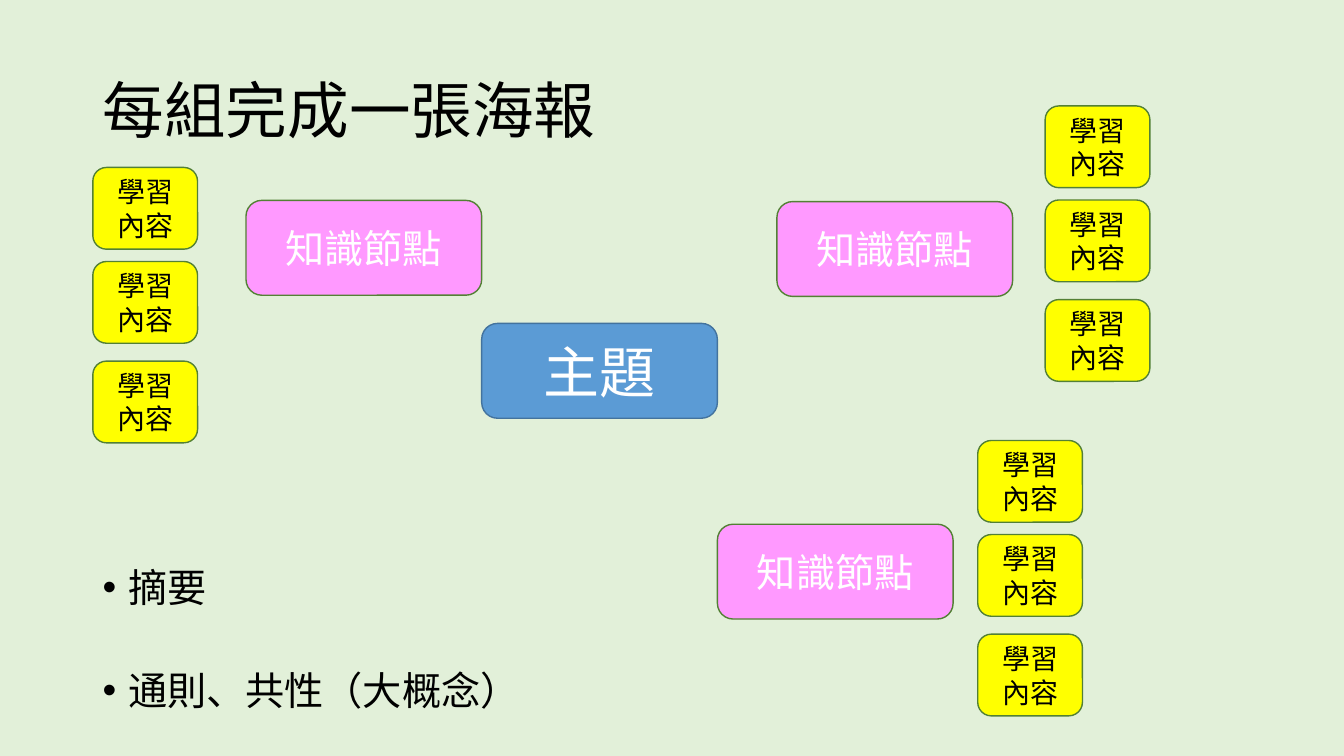
from dataclasses import dataclass

from lxml.etree import SubElement
from pptx import Presentation
from pptx.dml.color import RGBColor
from pptx.enum.shapes import MSO_SHAPE as Preset
from pptx.enum.text import MSO_ANCHOR as Anchor, PP_ALIGN as Align
from pptx.oxml.ns import qn
from pptx.util import Cm, Pt


@dataclass(frozen=True)
class Theme:
    font: str = "Calibri"
    background: str = "E2F0D9"
    ink: str = "000000"
    light_ink: str = "FFFFFF"
    topic_fill: str = "5B9BD5"
    topic_line: str = "43739E"
    node_fill: str = "FF99FF"
    content_fill: str = "FFFF00"
    branch_line: str = "538035"
    title_size: int = 44
    topic_size: int = 40
    body_size: int = 28
    content_size: int = 20


THEME = Theme()
NODE_SIZE = (5.94, 2.39)
CONTENT_SIZE = (2.64, 2.06)
CONTENT_OFFSETS = (0, 2.37, 4.88)

# Top left corners in cm: knowledge node, then its column of contents
BRANCHES = [
    ((6.2, 5.05), (2.34, 4.22)),
    ((19.58, 5.08), (26.34, 2.67)),
    ((18.08, 13.21), (24.64, 11.1)),
]


def set_font(para, size, color):
    para.font.name = THEME.font
    para.font.size = Pt(size)
    para.font.color.rgb = RGBColor.from_string(color)


def add_text_frame(page, box):
    frame = page.shapes.add_textbox(*map(Cm, box)).text_frame
    frame.word_wrap = True
    return frame


def add_title(page, box, text):
    frame = add_text_frame(page, box)
    frame.vertical_anchor = Anchor.MIDDLE
    para = frame.paragraphs[0]
    para.text = text
    para.line_spacing = 0.9
    set_font(para, THEME.title_size, THEME.ink)


def add_bullets(page, box, items):
    frame = add_text_frame(page, box)
    for index, item in enumerate(items):
        para = frame.paragraphs[0] if index == 0 else frame.add_paragraph()
        para.text = item
        para.line_spacing = 0.8
        if index:
            para.space_before = Pt(47)
        properties = para._p.get_or_add_pPr()
        properties.set("marL", str(Cm(0.64)))
        properties.set("indent", str(-Cm(0.64)))
        SubElement(properties, qn("a:buFont")).set("typeface", "Arial")
        SubElement(properties, qn("a:buChar")).set("char", "•")
        set_font(para, THEME.body_size, THEME.ink)


def add_card(page, box, text, fill, line, size, color):
    card = page.shapes.add_shape(Preset.ROUNDED_RECTANGLE, *map(Cm, box))
    card.shadow.inherit = False
    card.fill.solid()
    card.fill.fore_color.rgb = RGBColor.from_string(fill)
    card.line.color.rgb = RGBColor.from_string(line)
    card.line.width = Pt(1)
    frame = card.text_frame
    frame.word_wrap = True
    frame.vertical_anchor = Anchor.MIDDLE
    para = frame.paragraphs[0]
    para.text = text
    para.alignment = Align.CENTER
    set_font(para, size, color)


def add_branch(page, node_corner, column_corner):
    """Place a knowledge node and its column of learning contents."""
    add_card(page, (*node_corner, *NODE_SIZE), "知識節點", THEME.node_fill,
             THEME.branch_line, THEME.body_size, THEME.light_ink)
    left, top = column_corner
    for offset in CONTENT_OFFSETS:
        add_card(page, (left, top + offset, *CONTENT_SIZE), "學習內容",
                 THEME.content_fill, THEME.branch_line,
                 THEME.content_size, THEME.ink)


def main():
    deck = Presentation()
    deck.slide_width, deck.slide_height = Cm(33.87), Cm(19.05)
    page = deck.slides.add_slide(deck.slide_layouts[6])
    page.background.fill.solid()
    page.background.fill.fore_color.rgb = RGBColor.from_string(THEME.background)

    add_title(page, (2.34, 1.02, 29.21, 3.68), "每組完成一張海報")
    add_bullets(page, (2.34, 14.3, 29.21, 4.75), ["摘要", "通則、共性（大概念）"])
    add_card(page, (12.14, 8.15, *NODE_SIZE), "主題", THEME.topic_fill,
             THEME.topic_line, THEME.topic_size, THEME.light_ink)
    for node_corner, column_corner in BRANCHES:
        add_branch(page, node_corner, column_corner)

    deck.save("out.pptx")


if __name__ == "__main__":
    main()
